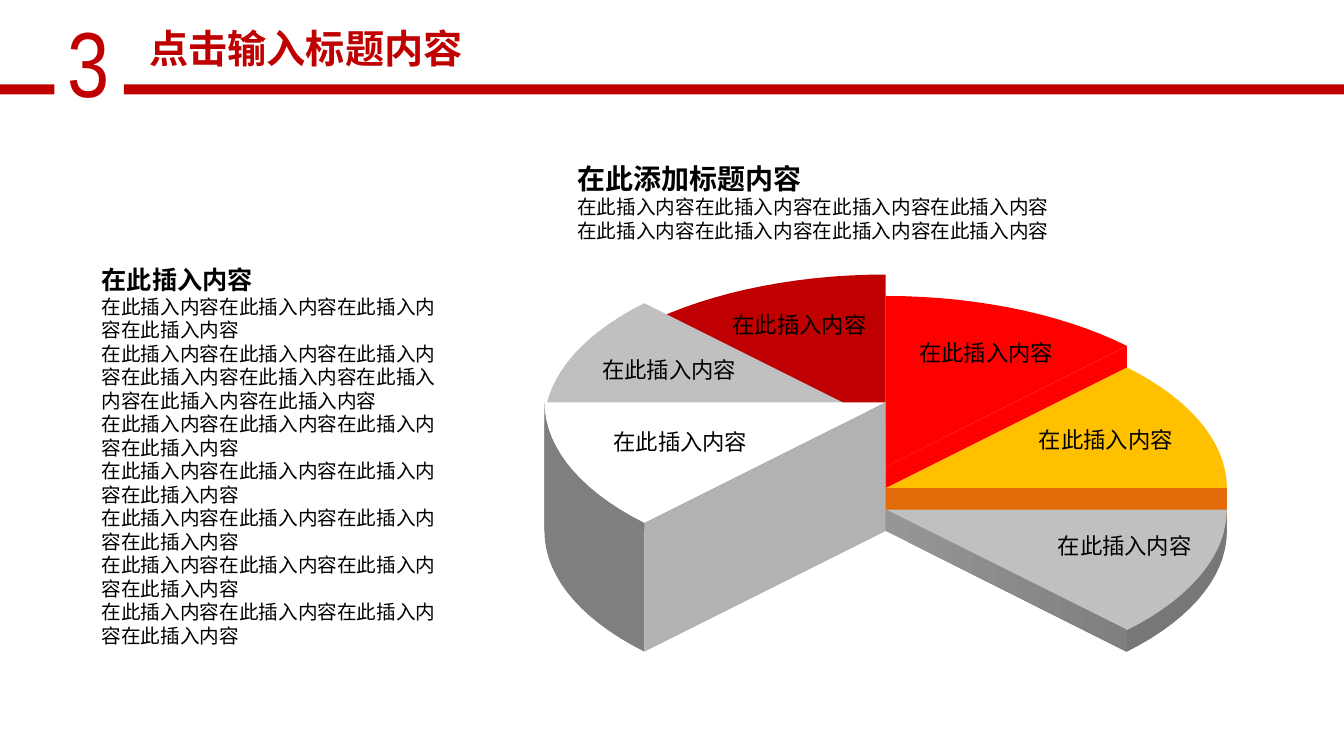
from dataclasses import dataclass
from math import cos, radians, sin

from lxml.etree import SubElement
from pptx import Presentation
from pptx.dml.color import RGBColor
from pptx.enum.shapes import MSO_SHAPE
from pptx.enum.text import MSO_ANCHOR, MSO_AUTO_SIZE, PP_ALIGN
from pptx.oxml.ns import qn
from pptx.util import Cm, Pt


@dataclass(frozen=True)
class Theme:
    """Colours, fonts and type sizes of the slide."""
    accent: str = "C00000"
    ink: str = "000000"
    red: str = "FF0000"
    gold: str = "FFC000"
    orange: str = "E36C09"
    silver: str = "C0C0C0"
    white: str = "FFFFFF"
    pale_wall: str = "DDDDDD"
    light_wall: str = "B2B2B2"
    dark_wall: str = "7F7F7F"
    deep_wall: str = "777777"
    shaded_wall: tuple = ("969696", "808080")
    font: str = "Noto Sans CJK SC"
    number_font: str = "Arial Narrow"
    number: int = 66
    title: int = 28
    caption: int = 20
    heading: int = 18
    label: int = 16
    body: int = 14


@dataclass(frozen=True)
class Box:
    """A region in centimetres."""
    left: float
    top: float
    width: float
    height: float

    def inside(self, left, top, width, height):
        """Return a box placed relative to this one."""
        return Box(self.left + left, self.top + top, width, height)

    def lengths(self):
        """Return left, top, width and height as lengths."""
        return [Cm(value) for value in (self.left, self.top, self.width, self.height)]


@dataclass(frozen=True)
class Slice:
    """One pie step: start angle, height level, colours and label place."""
    start: int
    level: int
    top: str
    cut: int
    cut_wall: object
    rim_wall: object
    label: tuple
    align: object


THEME = Theme()
PHRASE = "在此插入内容"
LEFT, CENTER = PP_ALIGN.LEFT, PP_ALIGN.CENTER
STEP = 0.54
SLICES = [
    Slice(90, 4, THEME.accent, 135, THEME.pale_wall, None, (4.49, 0.79, 4.01), LEFT),
    Slice(45, 3, THEME.red, 45, THEME.red, None, (9.09, 1.48, 4.09), CENTER),
    Slice(135, 5, THEME.silver, 180, THEME.shaded_wall, None, (0.89, 1.93, 4.52), CENTER),
    Slice(0, 2, THEME.gold, 0, THEME.orange, None, (12.21, 3.69, 3.99), LEFT),
    Slice(180, 6, THEME.white, 225, THEME.light_wall, THEME.dark_wall, (1.49, 3.74, 4.34), LEFT),
    Slice(315, 1, THEME.silver, 315, THEME.shaded_wall, THEME.deep_wall, (12.49, 6.35, 4.27), CENTER),
]


def set_values(target, values):
    """Set each attribute named in a dict of format values."""
    for name, value in values.items():
        setattr(target, name, value)


def paint(shape, colour):
    """Fill a shape with one colour or a pair, without line or shadow."""
    shape.shadow.inherit = False
    shape.line.fill.background()
    if isinstance(colour, tuple):
        shape.fill.gradient()
        shape.fill.gradient_angle = 0
        for stop, value in zip(shape.fill.gradient_stops, colour):
            stop.color.rgb = RGBColor.from_string(value)
    else:
        shape.fill.solid()
        shape.fill.fore_color.rgb = RGBColor.from_string(colour)


def write(shape, box, lines, align=LEFT, colour=THEME.ink, font=THEME.font):
    """Place a text shape and write its (text, size, bold) lines."""
    set_values(shape, dict(zip(("left", "top", "width", "height"), box.lengths())))
    frame = shape.text_frame
    set_values(frame, {"word_wrap": True, "auto_size": MSO_AUTO_SIZE.NONE,
                       "vertical_anchor": MSO_ANCHOR.TOP})
    frame.text = "\n".join(text for text, _, _ in lines)
    for paragraph, (_, size, bold) in zip(frame.paragraphs, lines):
        properties = paragraph._p.get_or_add_pPr()
        properties.set("marL", "0")
        properties.set("indent", "0")
        SubElement(properties, qn("a:buNone"))
        set_values(paragraph, {"alignment": align, "space_before": Pt(0),
                               "space_after": Pt(0), "line_spacing": 1.0})
        for run in paragraph.runs:
            set_values(run.font, {"size": Pt(size), "bold": bold, "name": font})
            run.font.color.rgb = RGBColor.from_string(colour)
            SubElement(run._r.get_or_add_rPr(), qn("a:ea")).set("typeface", font)


def add_text(slide, box, *content, **formats):
    """Add a text box with the given lines."""
    write(slide.shapes.add_textbox(*box.lengths()), box, *content, **formats)


def add_outline(slide, points, colour):
    """Add a closed polygon through points in centimetres."""
    corners = [(Cm(x), Cm(y)) for x, y in points]
    builder = slide.shapes.build_freeform(*corners[0], scale=1.0)
    builder.add_line_segments(corners[1:], close=True)
    paint(builder.convert_to_shape(), colour)


def add_header(slide, box):
    """Add the section number, the title and the broken red rule."""
    for left, width in ((0, 1.37), (3.12, box.width - 3.12)):
        bar = slide.shapes.add_shape(
            MSO_SHAPE.RECTANGLE, *box.inside(left, 2.13, width, 0.25).lengths())
        paint(bar, THEME.accent)
    add_text(slide, box.inside(1.45, 0, 0.86, 3.07), [("3", THEME.number, False)],
             colour=THEME.accent, font=THEME.number_font)
    write(slide.shapes.title, box.inside(3.15, 0.48, 9.12, 1.45),
          [("点击输入标题内容", THEME.title, True)], CENTER, THEME.accent)


def add_notes_column(slide, box):
    """Fill the body placeholder with the heading and its paragraphs."""
    repeats = (4, 8, 4, 4, 4, 4, 4)
    write(slide.placeholders[1], box, [(PHRASE, THEME.heading, True)] +
          [(PHRASE * count, THEME.body, False) for count in repeats])


def add_caption(slide, box):
    """Add the caption above the stepped pie."""
    add_text(slide, box, [("在此添加标题内容", THEME.caption, True)] +
             [(PHRASE * 4, THEME.body, False)] * 2)


def add_stepped_pie(slide, box):
    """Add six slices of different height standing on one floor."""
    radius_x, radius_y = box.width / 2, box.width / 4
    centre_x = box.left + radius_x
    floor = box.top + box.height - radius_y * sin(radians(45))

    def rim(angle, centre_y):
        """Return the rim point at an angle."""
        return (centre_x + radius_x * cos(radians(angle)),
                centre_y - radius_y * sin(radians(angle)))

    for part in SLICES:
        level = floor - part.level * STEP
        angles = range(part.start, part.start + 46, 3)
        arc = [rim(angle, level) for angle in angles]
        add_outline(slide, [(centre_x, level)] + arc, part.top)
        if part.rim_wall:
            base = [rim(angle, floor) for angle in reversed(angles)]
            add_outline(slide, arc + base, part.rim_wall)
        add_outline(slide, [(centre_x, level), rim(part.cut, level),
                            rim(part.cut, floor), (centre_x, floor)], part.cut_wall)
    for part in SLICES:
        add_text(slide, box.inside(*part.label, 0.94),
                 [(PHRASE, THEME.label, False)], align=part.align)


def main():
    """Build and save the slide."""
    presentation = Presentation()
    set_values(presentation, {"slide_width": Cm(33.87), "slide_height": Cm(19.05)})
    slide = presentation.slides.add_slide(presentation.slide_layouts[1])
    add_header(slide, Box(0, 0, 33.87, 3.07))
    add_stepped_pie(slide, Box(13.72, 6.93, 17.2, 9.49))
    add_caption(slide, Box(14.3, 3.94, 12.45, 2.31))
    add_notes_column(slide, Box(2.31, 6.53, 9.4, 10.59))
    presentation.save("out.pptx")


if __name__ == "__main__":
    main()
